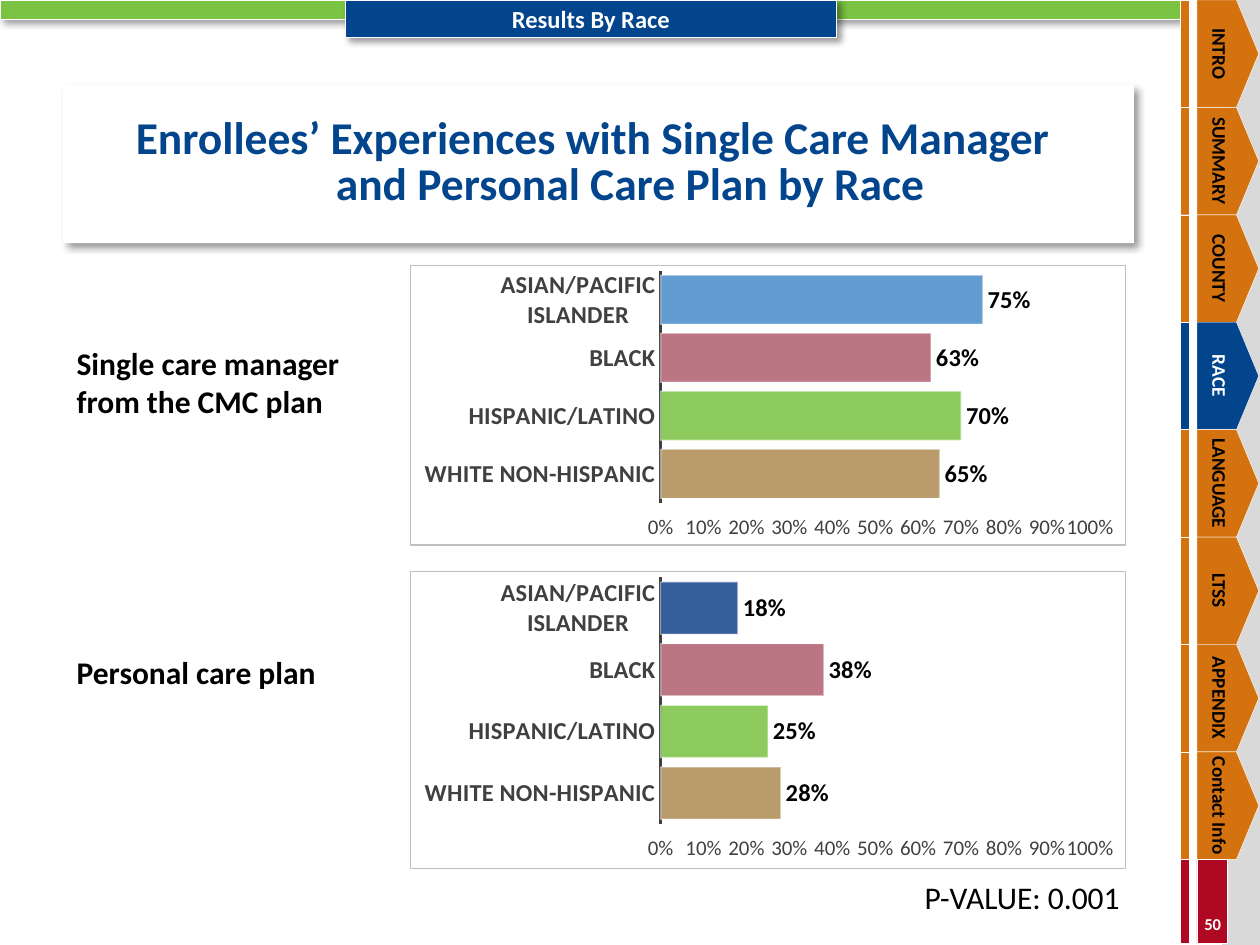
from lxml import etree
from pptx import Presentation
from pptx.chart.data import CategoryChartData
from pptx.dml.color import RGBColor
from pptx.enum import chart as chart_enum, shapes, text
from pptx.oxml import parse_xml
from pptx.oxml.ns import nsdecls, qn
from pptx.util import Inches, Pt

# Content
FONT = "Calibri"
BLUE, ORANGE, RED, GREEN = "02458C", "D4720F", "AE0823", "7BC342"
WHITE, BLACK, GREY = "FFFFFF", "000000", "404040"
TITLE = "Enrollees’ Experiences with Single Care Manager \vand Personal Care Plan by Race"
TABS = ["INTRO", "SUMMARY", "COUNTY", "RACE", "LANGUAGE", "LTSS", "APPENDIX", "Contact Info"]
CURRENT_TAB = "RACE"
RACES = ["WHITE NON-HISPANIC", "HISPANIC/LATINO", "BLACK", "ASIAN/PACIFIC ISLANDER"]
# Bar colours: (hex, opacity in percent)
SHARED_COLORS = [("BA9C6C", 100), (GREEN, 85), ("BC7583", 100)]
CHARTS = [  # top, height, values, colour of the last bar, overlap
    (2.1, 2.23, (0.65, 0.70, 0.63, 0.75), ("629CD0", 100), 71),
    (4.53, 2.37, (0.28, 0.25, 0.38, 0.18), ("12438A", 85), 0),
]
CAPTIONS = [  # text, left, top, width, height, bold
    ("Single care manager from the CMC plan", 0.51, 2.68, 2.57, 0.71, True),
    ("Personal care plan", 0.51, 5.13, 2.11, 0.4, True),
    ("P-VALUE: 0.001", 7.24, 6.92, 1.75, 0.42, False),
]
TAB_HEIGHT = 6.82 / len(TABS)
STRIP_LEFT, STRIP_WIDTH, TAB_LEFT = 9.37, 0.07, 9.5


def rgb(color):
    return RGBColor.from_string(color)


def style_font(font, size, color, bold=False):
    font.name, font.size, font.bold = FONT, Pt(size), bold
    font.color.rgb = rgb(color)


def write(shape, words, size, color, bold=True, align=None, anchor=None, inset=None):
    frame = shape.text_frame
    frame.text = words
    frame.word_wrap = True
    if anchor is not None:
        frame.vertical_anchor = anchor
    if inset is not None:
        frame.margin_left = frame.margin_right = Inches(inset)
        frame.margin_top = frame.margin_bottom = Inches(inset)
    paragraph = frame.paragraphs[0]
    paragraph.alignment = align
    for run in paragraph.runs:
        style_font(run.font, size, color, bold)
    return paragraph


def add_shadow(shape):
    shape.shadow.inherit = False
    effects = shape._element.spPr.find(qn("a:effectLst"))
    effects.append(parse_xml(
        f'<a:outerShdw {nsdecls("a")} blurRad="50800" dist="38100" dir="2700000" algn="tl" '
        'rotWithShape="0"><a:srgbClr val="000000"><a:alpha val="40000"/></a:srgbClr></a:outerShdw>'))


def add_block(slide, box, fill, line=0.25, kind=shapes.MSO_SHAPE.RECTANGLE):
    shape = slide.shapes.add_shape(kind, *map(Inches, box))
    shape.shadow.inherit = False
    shape.fill.solid()
    shape.fill.fore_color.rgb = rgb(fill)
    if line:
        shape.line.color.rgb = rgb(WHITE)
        shape.line.width = Pt(line)
    else:
        shape.line.fill.background()
    return shape


def add_text(slide, box, *args, **options):
    shape = slide.shapes.add_textbox(*map(Inches, box))
    return shape, write(shape, *args, **options)


def set_opacity(color_element, percent):
    if percent < 100:
        etree.SubElement(color_element, qn("a:alpha")).set("val", str(percent * 1000))


def add_bar_chart(slide, top, height, values, last_color, overlap):
    data = CategoryChartData(number_format="###0%")
    data.categories = RACES
    data.add_series("Series 1", values)
    chart = slide.shapes.add_chart(
        chart_enum.XL_CHART_TYPE.BAR_CLUSTERED, Inches(3.25), Inches(top),
        Inches(5.69), Inches(height), data).chart
    chart.has_legend = chart.has_title = False
    style_font(chart.font, 10, WHITE)

    # Axes
    category, value = chart.category_axis, chart.value_axis
    style_font(category.tick_labels.font, 14, GREY, True)
    category.major_tick_mark = chart_enum.XL_TICK_MARK.NONE
    category.format.line.color.rgb = rgb(GREY)
    category.format.line.width = Pt(1.5)
    style_font(value.tick_labels.font, 12, GREY)
    value.tick_labels.number_format = "###0%"
    value.tick_labels.number_format_is_linked = False
    value.minimum_scale, value.maximum_scale, value.major_unit = 0, 1, 0.1
    value.has_major_gridlines = False
    value.major_tick_mark = chart_enum.XL_TICK_MARK.OUTSIDE
    value.format.line.fill.background()

    # Bars
    plot = chart.plots[0]
    plot.gap_width, plot.overlap, plot.vary_by_categories = 18, overlap, False
    series = plot.series[0]
    colors = SHARED_COLORS + [last_color]
    for index, (color, _) in enumerate(colors):
        style = series.points[index].format
        style.fill.solid()
        style.fill.fore_color.rgb = rgb(color)
        style.line.color.rgb = rgb(WHITE)
        style.line.width = Pt(0.75)
    for point, (_, opacity) in zip(chart.element.iter(qn("c:dPt")), colors):
        fill, line = point.iter(qn("a:srgbClr"))
        set_opacity(fill, opacity)
        set_opacity(line, 50)

    # Value labels
    labels = series.data_labels
    labels.show_value = True
    labels.position = chart_enum.XL_LABEL_POSITION.OUTSIDE_END
    labels.number_format, labels.number_format_is_linked = "###0%", False
    style_font(labels.font, 14, BLACK, True)

    # Plot area position and chart border
    plot_area = next(chart.element.iter(qn("c:plotArea")))
    for layout in plot_area.findall(qn("c:layout")):
        plot_area.remove(layout)
    sizes = "".join(f'<c:{key} val="{part}"/>' for key, part in
                    (("x", 0.35), ("y", 0.02), ("w", 0.6), ("h", 0.83)))
    plot_area.insert(0, parse_xml(
        f'<c:layout {nsdecls("c")}><c:manualLayout><c:layoutTarget val="inner"/>'
        f'<c:xMode val="edge"/><c:yMode val="edge"/>{sizes}</c:manualLayout></c:layout>'))
    chart.element.find(qn("c:chart")).addnext(parse_xml(
        f'<c:spPr {nsdecls("c", "a")}><a:noFill/><a:ln w="9525"><a:solidFill>'
        '<a:srgbClr val="BFBFBF"/></a:solidFill></a:ln></c:spPr>'))


def main():
    presentation = Presentation()
    presentation.slide_width, presentation.slide_height = Inches(10), Inches(7.5)
    slide = presentation.slides.add_slide(presentation.slide_layouts[5])
    center, middle = text.PP_ALIGN.CENTER, text.MSO_ANCHOR.MIDDLE

    # Title
    title = slide.shapes.title
    title.left, title.top, title.width, title.height = map(Inches, (0.5, 0.67, 8.5, 1.26))
    title.fill.solid()
    title.fill.fore_color.rgb = rgb(WHITE)
    add_shadow(title)
    paragraph = write(title, TITLE, 26, BLUE, align=center, anchor=middle)
    title.text_frame.auto_size = text.MSO_AUTO_SIZE.NONE
    paragraph.line_spacing = 0.85
    properties = paragraph._p.get_or_add_pPr()
    properties.set("marL", str(Inches(0.51)))
    properties.set("indent", str(-Inches(0.51)))

    # Top bar and section heading
    add_block(slide, (9.7, 0, 0.3, 7.5), "D9D9D9", line=0)
    add_shadow(add_block(slide, (0, 0, 9.37, 0.15), GREEN))
    heading = add_block(slide, (2.74, 0, 3.9, 0.3), BLUE, line=0.75)
    add_shadow(heading)
    write(heading, "Results By Race", 14, WHITE, align=center, anchor=middle)

    # Navigation tabs
    for index, name in enumerate(TABS):
        top = index * TAB_HEIGHT
        current = name == CURRENT_TAB
        fill = BLUE if current else ORANGE
        add_block(slide, (STRIP_LEFT, top, STRIP_WIDTH, TAB_HEIGHT), fill)
        tab = add_block(slide, (TAB_LEFT, top, 0.49, TAB_HEIGHT), fill,
                        kind=shapes.MSO_SHAPE.PENTAGON)
        tab.adjustments[0] = 0.36
        label, paragraph = add_text(
            slide, (9.59, top, 0.25, TAB_HEIGHT), name, 11, WHITE if current else BLACK,
            align=center, anchor=text.MSO_ANCHOR.BOTTOM, inset=0)
        paragraph.line_spacing = 0.85
        label.text_frame._txBody.bodyPr.set("vert", "vert")

    # Page number
    for left, width in ((STRIP_LEFT, STRIP_WIDTH), (TAB_LEFT, 0.24)):
        add_block(slide, (left, 6.82, width, 0.67), RED)
    add_text(slide, (TAB_LEFT, 7.25, 0.25, 0.16), "50", 9.5, WHITE,
             align=center, anchor=middle, inset=0)

    # Charts and captions
    for chart_row in CHARTS:
        add_bar_chart(slide, *chart_row)
    for words, left, top, width, height, bold in CAPTIONS:
        add_text(slide, (left, top, width, height), words, 18, BLACK, bold)

    presentation.save("out.pptx")


if __name__ == "__main__":
    main()
